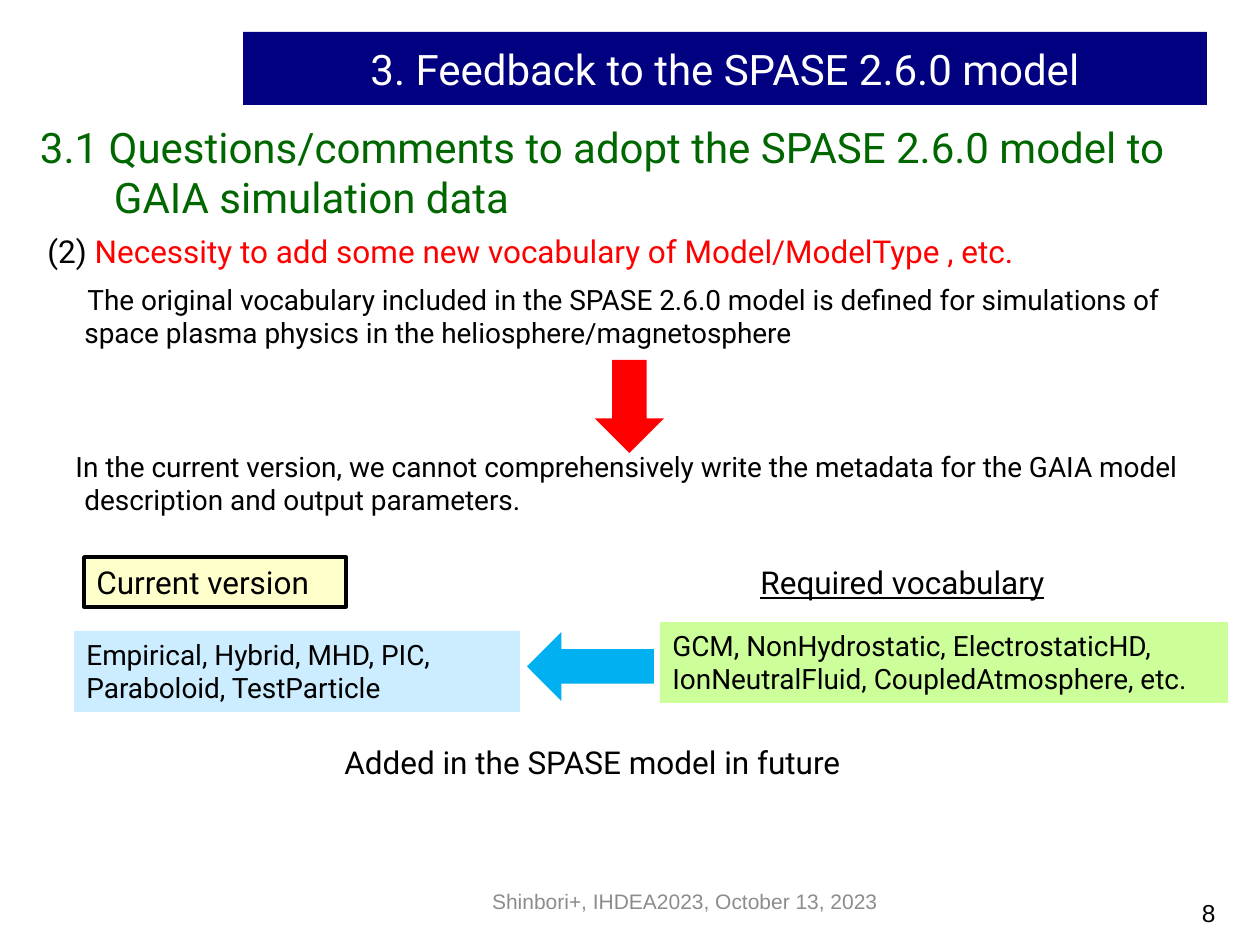
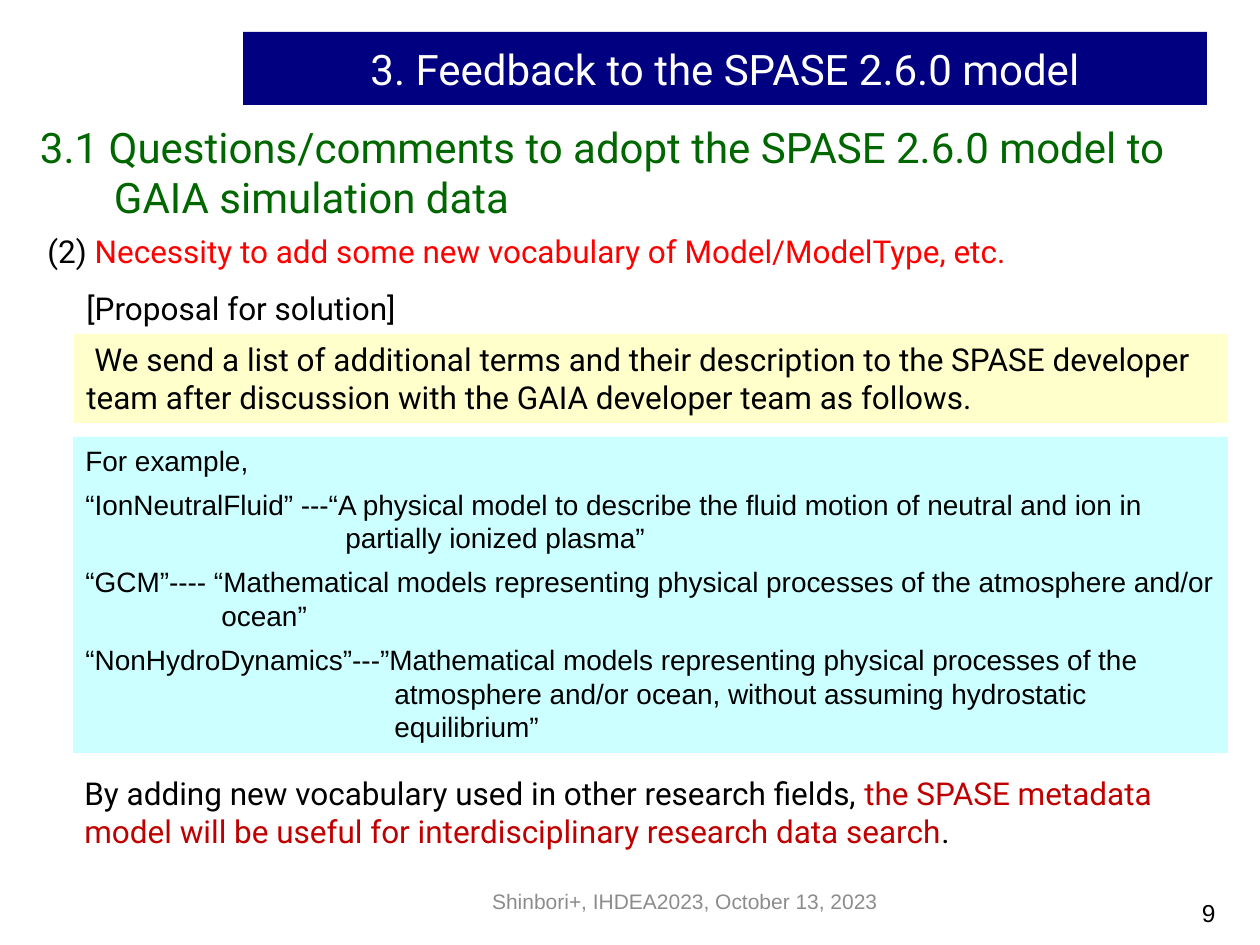
from pptx import Presentation
from pptx.dml.color import RGBColor
from pptx.enum.shapes import MSO_SHAPE
from pptx.enum.text import MSO_ANCHOR, PP_ALIGN
from pptx.util import Pt

LEFT, MID, RIGHT = PP_ALIGN.LEFT, PP_ALIGN.CENTER, PP_ALIGN.RIGHT
TOP, CENTER = MSO_ANCHOR.TOP, MSO_ANCHOR.MIDDLE
RECT, DOWN, BACK = MSO_SHAPE.RECTANGLE, MSO_SHAPE.DOWN_ARROW, MSO_SHAPE.LEFT_ARROW
PX = 914400 / 126
HEX = {
    "black": "000000", "white": "FFFFFF", "grey": "8C8C8C", "navy": "000080",
    "green": "006600", "red": "FF0000", "dark": "C00000", "blue": "00B0F0",
    "lime": "CCFF99", "cream": "FFFFCC", "sky": "CCECFF", "aqua": "CCFFFF",
}
RGB = {name: RGBColor.from_string(code) for name, code in HEX.items()}


def form(slide, kind, at, fill=None, edge=None):
    """Add a preset shape, or a text box when kind is None."""
    spot = [round(n * PX) for n in at]
    if kind is None:
        return slide.shapes.add_textbox(*spot)
    shape = slide.shapes.add_shape(kind, *spot)
    shape.shadow.inherit = False
    shape.fill.solid()
    shape.fill.fore_color.rgb = RGB[fill]
    if edge:
        shape.line.color.rgb = RGB[edge]
        shape.line.width = Pt(2)
    else:
        shape.line.fill.background()
    return shape


def write(shape, paras, size=18, face="Roboto", align=LEFT, anchor=TOP, inset=None):
    """Fill a shape; each paragraph is (left margin, first indent, runs)."""
    frame = shape.text_frame
    frame.word_wrap = True
    frame.vertical_anchor = anchor
    if inset is not None:
        edge = round(inset * PX)
        frame.margin_left = frame.margin_right = edge
        frame.margin_top = frame.margin_bottom = edge
    for i, (left, first, runs) in enumerate(paras):
        para = frame.add_paragraph() if i else frame.paragraphs[0]
        props = para._p.get_or_add_pPr()
        props.set("marL", str(round(left * PX)))
        props.set("indent", str(round(first * PX)))
        para.alignment = align
        if i:
            para.space_before = Pt(6)
        para.font.size = Pt(size)
        para.font.name = face
        for text, tone in runs:
            run = para.add_run()
            run.text = text
            run.font.color.rgb = RGB[tone]


deck = Presentation()
deck.slide_width, deck.slide_height = round(1260 * PX), round(945 * PX)

# Shared frame: title band, section heading, point, footer, number
pages = []
for num, point in (
    (8, "Necessity to add some new vocabulary of Model/ModelType , etc."),
    (9, "Necessity to add some new vocabulary of Model/ModelType, etc."),
):
    page = deck.slides.add_slide(deck.slide_layouts[5])
    pages.append(page)
    title = page.shapes.title
    title.left, title.top, title.width, title.height = [
        round(n * PX) for n in (243, 32, 964, 73)]
    title.fill.solid()
    title.fill.fore_color.rgb = RGB["navy"]
    write(title, [(0, 0, [("3. Feedback to the SPASE 2.6.0 model", "white")])],
          24, align=MID, anchor=CENTER)
    write(form(page, None, (35, 116, 1211, 110)),
          [(74, -74, [("3.1 Questions/comments to adopt the SPASE 2.6.0 model to "
                       "GAIA simulation data", "green")])], 24, inset=5)
    write(form(page, None, (35, 226, 1193, 50)),
          [(0, 0, [("(2) ", "black"), (point, "red")])])
    write(form(page, None, (273, 876, 824, 50)),
          [(0, 0, [("Shinbori+, IHDEA2023, October 13, 2023", "grey")])],
          12, "Arial", MID, CENTER)
    write(form(page, None, (1155, 892, 73, 42)),
          [(0, 0, [(str(num), "black")])], 14, "Arial", RIGHT)
need, plan = pages

# Slide 8: why the vocabulary falls short
for top, first, text in (
    (276, 3, "The original vocabulary included in the SPASE 2.6.0 model is defined "
             "for simulations of space plasma physics in the heliosphere/magnetosphere"),
    (443, -9, "In the current version, we cannot comprehensively write the metadata "
              "for the GAIA model description and output parameters."),
):
    write(form(need, None, (35, top, 1193, 81)),
          [(37, first, [(text, "black")])], 16)
form(need, DOWN, (595, 360, 69, 93), "red")
form(need, BACK, (527, 632, 127, 69), "blue")

# Slide 8: current and required terms
for at, fill, text in (
    ((660, 622, 568, 81), "lime",
     "GCM, NonHydrostatic, ElectrostaticHD, IonNeutralFluid, CoupledAtmosphere, etc."),
    ((74, 631, 446, 81), "sky",
     "Empirical, Hybrid, MHD, PIC, Paraboloid, TestParticle"),
):
    write(form(need, RECT, at, fill), [(0, 0, [(text, "black")])], 16)
write(form(need, RECT, (84, 557, 262, 50), "cream", "black"),
      [(0, 0, [("Current version", "black")])])
want = form(need, None, (748, 557, 348, 50))
write(want, [(0, 0, [("Required vocabulary", "black")])])
want.text_frame.paragraphs[0].runs[0].font.underline = True
write(form(need, None, (332, 737, 556, 50)),
      [(0, 0, [("Added in the SPASE model in future", "black")])])

# Slide 9: proposal
write(form(plan, None, (74, 283, 377, 50)),
      [(0, 0, [("[Proposal for solution]", "black")])])
write(form(plan, RECT, (74, 334, 1154, 89), "cream"),
      [(0, 8, [("We send a list of additional terms and their description to the "
                "SPASE developer team after discussion with the GAIA developer team "
                "as follows.", "black")])])

# Slide 9: example terms, with hanging definitions
terms = (
    (0, "For example,"),
    (260, "“IonNeutralFluid” ---“A physical model to describe the fluid motion of "
          "neutral and ion in partially ionized plasma”"),
    (136, "“GCM”---- “Mathematical models representing physical processes of the "
          "atmosphere and/or ocean”"),
    (309, "“NonHydroDynamics”---”Mathematical models representing physical processes "
          "of the atmosphere and/or ocean, without assuming hydrostatic equilibrium”"),
)
write(form(plan, RECT, (73, 437, 1155, 316), "aqua"),
      [(hang, -hang, [(text, "black")]) for hang, text in terms], 16, "Arial")

# Slide 9: conclusion
write(form(plan, None, (72, 768, 1154, 89)),
      [(0, 0, [("By adding new vocabulary used in other research fields, ", "black"),
               ("the SPASE metadata model will be useful for interdisciplinary "
                "research data search", "dark"),
               (".", "black")])])

deck.save("out.pptx")
